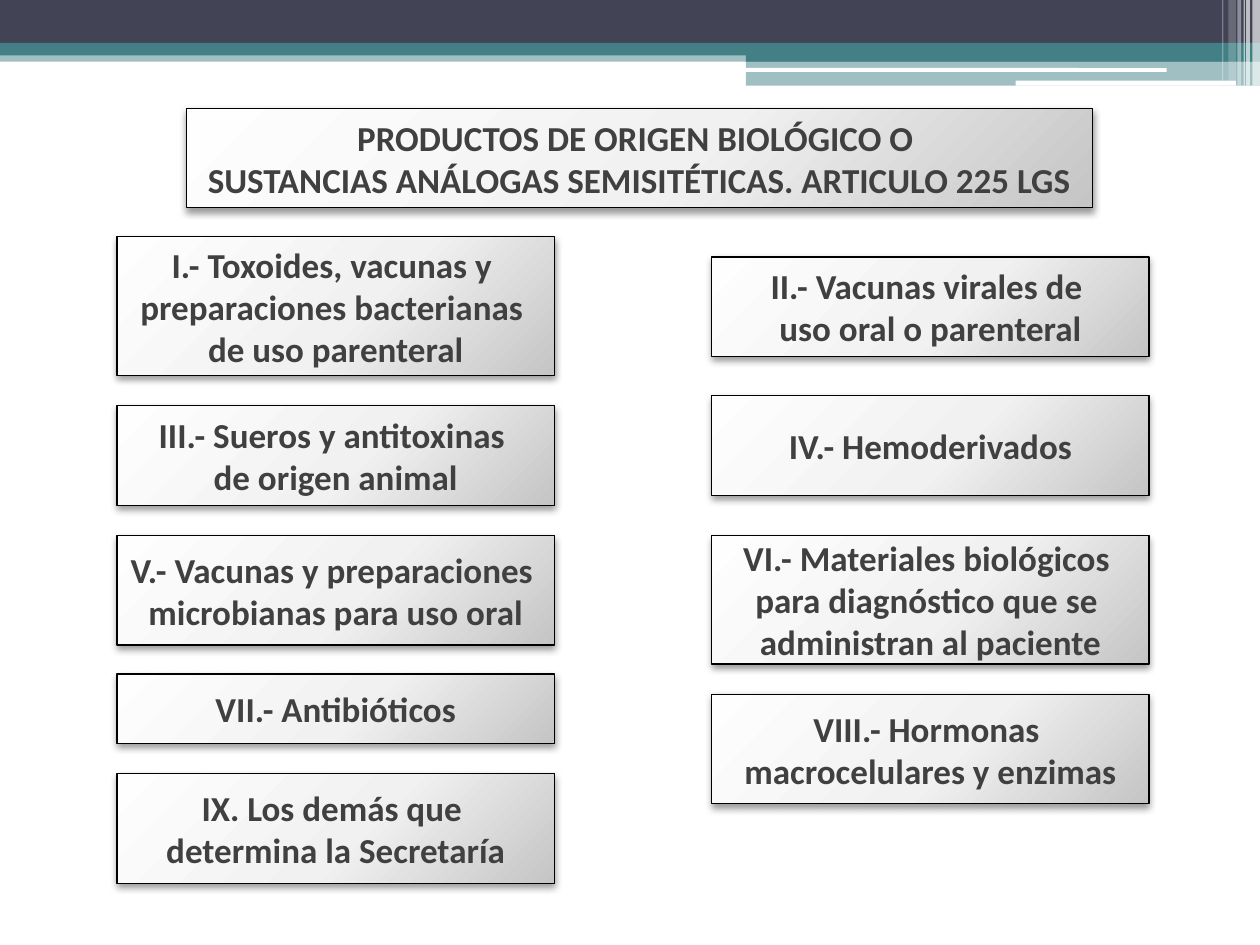
from pptx import Presentation
from pptx import util as u
from pptx.dml.color import RGBColor
from pptx.enum import shapes, text
from pptx.oxml import parse_xml
from pptx.oxml.ns import nsdecls, qn

COLORS = {
    "navy": "424456", "teal": "438086", "white": "FFFFFF",
    "black": "000000", "text": "404040",
    "light": "FEFEFE", "middle": "F1F1F1", "dark": "C5C5C5",
}
RECT = shapes.MSO_SHAPE.RECTANGLE
ROUNDED = shapes.MSO_SHAPE.ROUNDED_RECTANGLE
LEFT_COLUMN, RIGHT_COLUMN, COLUMN_WIDTH = 0.93, 5.65, 3.47

# left, top, width, height, colour, opacity in percent
BANDS = [
    (0, 0.4, 10, 0.09, "teal", 50),
    (0, 0, 10, 0.34, "navy", 100),
    (0, 0.34, 10, 0.1, "teal", 100),
    (5.92, 0.39, 4.08, 0.1, "teal", 100),
    (5.92, 0.48, 4.08, 0.2, "teal", 50),
]
HIGHLIGHTS = [(5.91, 0.54, 3.35, 0.03), (8.06, 0.64, 1.75, 0.04)]
# left, width, height, opacity in percent
STRIPES = [
    (9.94, 0.06, 0.68, 65), (9.89, 0.03, 0.68, 65), (9.87, 0.01, 0.68, 60),
    (9.82, 0.03, 0.68, 40), (9.75, 0.06, 0.64, 20), (9.7, 0.01, 0.64, 30),
]
TITLE = ["PRODUCTOS DE ORIGEN BIOLÓGICO O ",
         "SUSTANCIAS ANÁLOGAS SEMISITÉTICAS. ARTICULO 225 LGS"]
# column, top, height, lines, hanging indent
PRODUCTS = [
    (LEFT_COLUMN, 1.88, 1.1, ["I.- Toxoides, vacunas y ", "preparaciones bacterianas ",
                              "de uso parenteral"], 0.5),
    (RIGHT_COLUMN, 2.04, 0.79, ["II.- Vacunas virales de ", "uso oral o parenteral"], 0),
    (LEFT_COLUMN, 3.22, 0.79, ["III.- Sueros y antitoxinas ", "de origen animal"], 0),
    (RIGHT_COLUMN, 3.14, 0.79, ["IV.- Hemoderivados"], 0),
    (LEFT_COLUMN, 4.25, 0.87, ["V.- Vacunas y preparaciones ", "microbianas para uso oral"], 0),
    (RIGHT_COLUMN, 4.25, 1.02, ["VI.- Materiales biológicos ", "para diagnóstico que se ",
                                "administran al paciente"], 0),
    (LEFT_COLUMN, 5.35, 0.55, ["VII.- Antibióticos"], 0),
    (RIGHT_COLUMN, 5.51, 0.87, ["VIII.- Hormonas ", "macrocelulares y enzimas"], 0),
    (LEFT_COLUMN, 6.14, 0.87, ["IX. Los demás que ", "determina la Secretaría"], 0),
]


def color(name):
    return RGBColor.from_string(COLORS[name])


def add_shape(page, kind, left, top, width, height):
    shape = page.shapes.add_shape(kind, *map(u.Inches, (left, top, width, height)))
    shape.shadow.inherit = False
    return shape


def add_bar(page, left, top, width, height, fill, opacity=100, kind=RECT):
    """Add a borderless, optionally translucent bar."""
    bar = add_shape(page, kind, left, top, width, height)
    bar.fill.solid()
    bar.fill.fore_color.rgb = color(fill)
    bar.line.fill.background()
    if opacity < 100:
        bar.element.spPr.find(qn("a:solidFill"))[0].append(
            parse_xml(f'<a:alpha {nsdecls("a")} val="{opacity * 1000}"/>'))
    return bar


def add_gradient(shape):
    """Fill with a radial gradient centred beyond the top left corner."""
    stops = "".join(
        f'<a:gs pos="{percent * 1000}"><a:srgbClr val="{COLORS[name]}"/></a:gs>'
        for percent, name in ((0, "light"), (55, "middle"), (100, "dark")))
    shape.element.spPr.find(qn("a:prstGeom")).addnext(parse_xml(
        f'<a:gradFill {nsdecls("a")} rotWithShape="1"><a:gsLst>{stops}</a:gsLst>'
        '<a:path path="circle"><a:fillToRect l="-40000" t="-90000" r="140000" b="190000"/>'
        '</a:path></a:gradFill>'))


def add_shadow(shape):
    shape.element.spPr.find(qn("a:effectLst")).append(parse_xml(
        f'<a:outerShdw {nsdecls("a")} blurRad="{u.Pt(4.1)}" dist="{u.Pt(2)}" '
        f'dir="5400000" rotWithShape="0"><a:srgbClr val="{COLORS["black"]}">'
        '<a:alpha val="40000"/></a:srgbClr></a:outerShdw>'))


def add_box(page, left, top, width, height, lines, hanging=0):
    box = add_shape(page, RECT, left, top, width, height)
    add_gradient(box)
    add_shadow(box)
    box.line.color.rgb = color("black")
    box.line.width = u.Pt(0.75)
    frame = box.text_frame
    frame.word_wrap = False
    frame.vertical_anchor = text.MSO_ANCHOR.MIDDLE
    frame.text = "\n".join(lines)
    for para in frame.paragraphs:
        para.alignment = text.PP_ALIGN.CENTER
        para.font.name = "Calibri"
        para.font.size = u.Pt(20)
        para.font.bold = True
        para.font.color.rgb = color("text")
        if hanging:
            properties = para._p.get_or_add_pPr()
            properties.set("marL", str(u.Inches(hanging)))
            properties.set("indent", str(-u.Inches(hanging)))


def add_header(page):
    for band in BANDS:
        add_bar(page, *band)
    for place in HIGHLIGHTS:
        add_bar(page, *place, "white", kind=ROUNDED)
    for left, width, height, opacity in STRIPES:
        add_bar(page, left, 0, width, height, "white", opacity)


def main():
    deck = Presentation()
    deck.slide_width, deck.slide_height = u.Inches(10), u.Inches(7.5)
    page = deck.slides.add_slide(deck.slide_layouts[6])
    add_header(page)
    add_box(page, 1.48, 0.86, 7.19, 0.79, TITLE)
    for left, top, height, lines, hanging in PRODUCTS:
        add_box(page, left, top, COLUMN_WIDTH, height, lines, hanging)
    deck.save("out.pptx")


if __name__ == "__main__":
    main()
